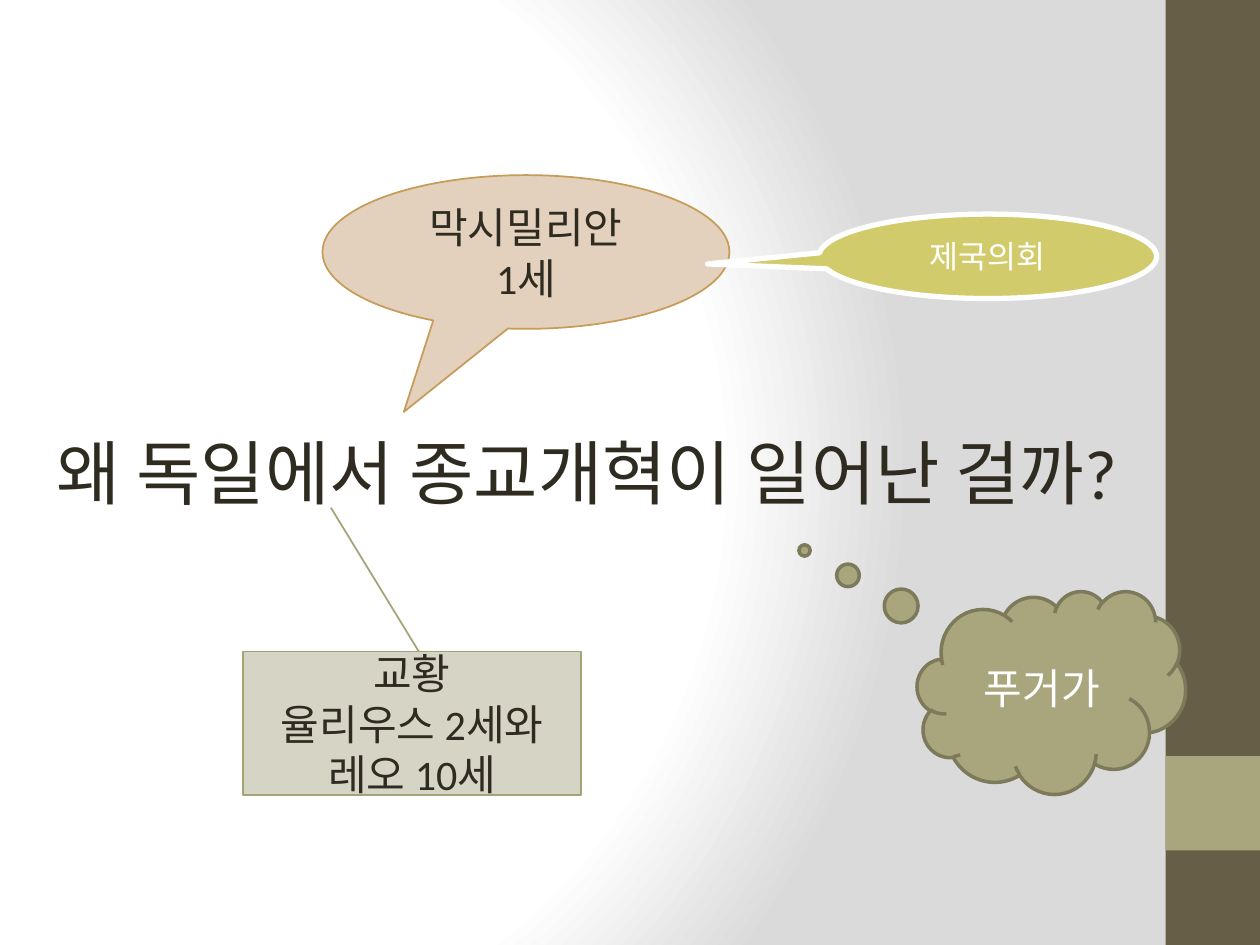
import dataclasses

import pptx
import pptx.dml.color
import pptx.enum.shapes
import pptx.enum.text
import pptx.oxml
import pptx.oxml.ns
import pptx.util

Inches = pptx.util.Inches
SHAPE = pptx.enum.shapes.MSO_SHAPE
ALIGN = pptx.enum.text.PP_ALIGN
ANCHOR = pptx.enum.text.MSO_ANCHOR


@dataclasses.dataclass(frozen=True)
class Theme:
    """Colours, font and type sizes of the slide."""
    font: str = "Calibri"
    title: int = 40
    body: int = 24
    small: int = 18
    dark: str = "2F2B20"
    white: str = "FFFFFF"
    edge: str = "DADADA"
    bar: str = "675E47"
    olive: str = "A9A57C"
    olive_line: str = "7D7A5C"
    sand: str = "E3D1BD"
    sand_line: str = "C69C58"
    lime: str = "D2CB6C"
    stone: str = "D5D4C5"
    stone_line: str = "A6A278"


T = Theme()


def rgb(value):
    """Turn a hex string into a colour."""
    return pptx.dml.color.RGBColor.from_string(value)


def write(tf, text, size=T.body, color=T.dark, align=ALIGN.CENTER, anchor=ANCHOR.MIDDLE, wrap=True):
    """Fill a text frame with one formatted paragraph per line of text."""
    tf.word_wrap = wrap
    tf.vertical_anchor = anchor
    for i, line in enumerate(text.split("\n")):
        p = tf.paragraphs[0] if i == 0 else tf.add_paragraph()
        p.alignment = align
        r = p.add_run()
        r.text = line
        r.font.name = T.font
        r.font.size = pptx.util.Pt(size)
        r.font.color.rgb = rgb(color)


def add_shape(s, kind, box, fill, line=None, width=1, adj=()):
    """Place a preset shape in a box given in inches."""
    sp = s.shapes.add_shape(kind, *map(Inches, box))
    sp.shadow.inherit = False
    sp.fill.solid()
    sp.fill.fore_color.rgb = rgb(fill)
    if line:
        sp.line.color.rgb = rgb(line)
        sp.line.width = pptx.util.Pt(width)
    else:
        sp.line.fill.background()
    for i, value in enumerate(adj):
        sp.adjustments[i] = value
    return sp


def add_background(s):
    """Give the slide a circular gradient that darkens to the right."""
    s.background.fill.gradient()
    old = s.element.xpath(".//p:bgPr/a:gradFill")[0]
    stops = "".join(
        f'<a:gs pos="{pos * 1000}"><a:srgbClr val="{color}"/></a:gs>'
        for pos, color in ((0, T.white), (75, T.white), (100, T.edge)))
    new = pptx.oxml.parse_xml(
        f'<a:gradFill {pptx.oxml.ns.nsdecls("a")} rotWithShape="1"><a:gsLst>{stops}</a:gsLst>'
        '<a:path path="circle"><a:fillToRect l="20000" t="50000" r="100000" b="50000"/></a:path>'
        '</a:gradFill>')
    old.getparent().replace(old, new)


def add_sidebar(s, x, y, w, h):
    """Draw the side bar with its square accent."""
    add_shape(s, SHAPE.RECTANGLE, (x, y, w, h), T.bar)
    add_shape(s, SHAPE.RECTANGLE, (x, y + h - 2 * w, w, w), T.olive)


def add_question(s, x, y, w, h):
    """Place the question in the title placeholder."""
    sp = s.shapes.title
    sp.left, sp.top, sp.width, sp.height = map(Inches, (x, y, w, h))
    write(sp.text_frame, "왜 독일에서 종교개혁이 일어난 걸까?", size=T.title,
          align=ALIGN.LEFT, anchor=ANCHOR.TOP, wrap=False)
    sp.text_frame.auto_size = pptx.enum.text.MSO_AUTO_SIZE.SHAPE_TO_FIT_TEXT


def add_callout(s, kind, box, text, fill, line, width=1, adj=(), **fmt):
    """Place a callout with its centred text."""
    sp = add_shape(s, kind, box, fill, line, width, adj)
    write(sp.text_frame, text, **fmt)


def main():
    """Build the slide and save it."""
    prs = pptx.Presentation()
    prs.slide_width, prs.slide_height = Inches(10), Inches(7.5)
    s = prs.slides.add_slide(prs.slide_layouts[5])
    add_background(s)
    add_sidebar(s, 9.25, 0, 0.75, 7.5)
    add_question(s, 0.35, 3.36, 9.3, 0.77)
    add_callout(s, SHAPE.OVAL_CALLOUT, (2.56, 1.39, 3.23, 1.22), "막시밀리안\n1세",
                T.sand, T.sand_line, adj=(-0.3, 1.04))
    add_callout(s, SHAPE.OVAL_CALLOUT, (6.5, 1.7, 2.68, 0.67), "제국의회",
                T.lime, T.white, width=3, adj=(-0.83, 0.09), size=T.small, color=T.white)
    add_callout(s, SHAPE.LINE_CALLOUT_1, (1.93, 5.17, 2.68, 1.14), "교황\n율리우스 2세와 레오 10세",
                T.stone, T.stone_line, adj=(0, 0.52, -1, 0.26))
    add_callout(s, SHAPE.CLOUD_CALLOUT, (7.28, 4.69, 2.13, 1.61), "푸거가",
                T.olive, T.olive_line, width=2, adj=(-0.92, -0.7), color=T.white)
    prs.save("out.pptx")


if __name__ == "__main__":
    main()
